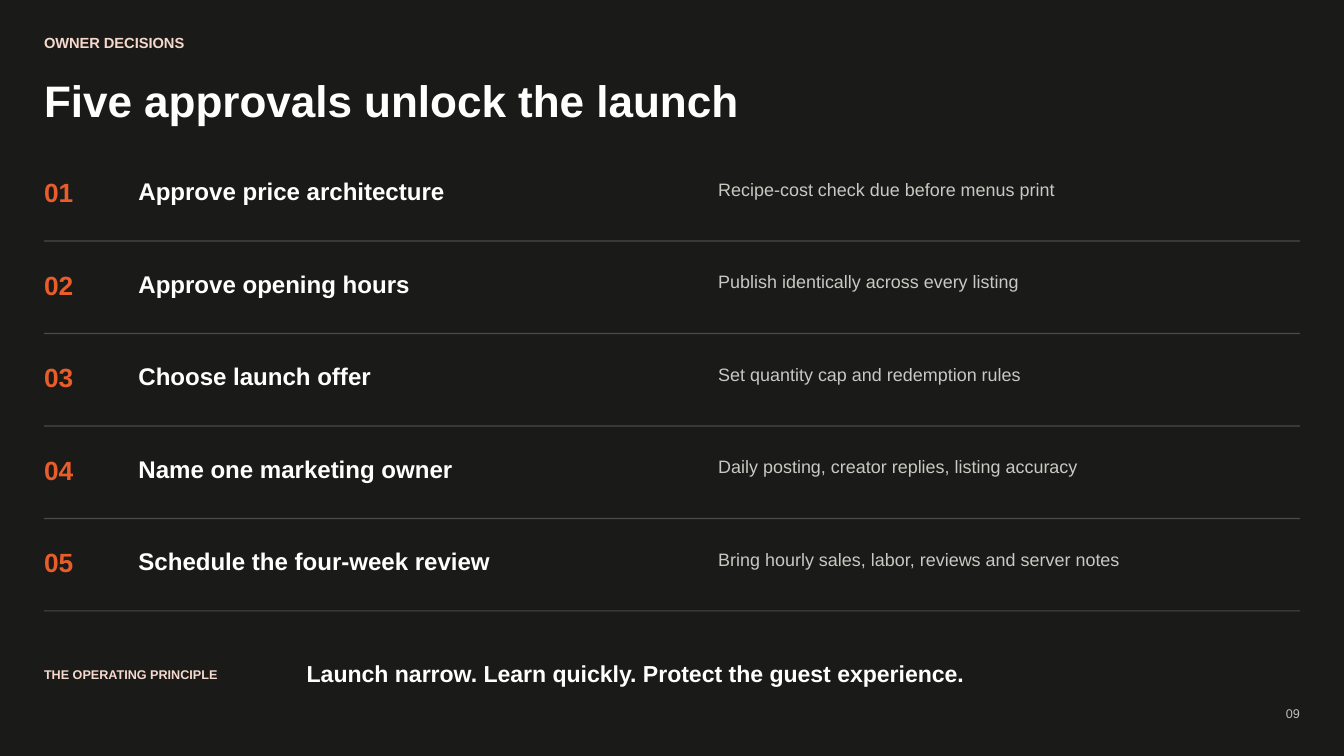
from pptx import Presentation
from pptx.dml.color import RGBColor
from pptx.enum.shapes import MSO_SHAPE
from pptx.enum.text import MSO_ANCHOR, PP_ALIGN
from pptx.util import Cm, Pt

RECTANGLE = MSO_SHAPE.RECTANGLE
TOP = MSO_ANCHOR.TOP
LEFT = PP_ALIGN.LEFT
RIGHT = PP_ALIGN.RIGHT

INK = RGBColor(0x1A, 0x1A, 0x18)
WHITE = RGBColor(0xFF, 0xFF, 0xFF)
BLUSH = RGBColor(0xF5, 0xD9, 0xCD)
ORANGE = RGBColor(0xE8, 0x5D, 0x2A)
SILVER = RGBColor(0xC9, 0xC9, 0xC3)
GREY = RGBColor(0xBF, 0xBF, 0xB9)
RULE = RGBColor(0x4B, 0x4B, 0x48)

MARGIN = 1.11
CONTENT_WIDTH = 31.65
FIRST_ROW = 4.45
ROW_PITCH = 2.33

APPROVALS = [
    ("Approve price architecture", "Recipe-cost check due before menus print"),
    ("Approve opening hours", "Publish identically across every listing"),
    ("Choose launch offer", "Set quantity cap and redemption rules"),
    ("Name one marketing owner", "Daily posting, creator replies, listing accuracy"),
    ("Schedule the four-week review", "Bring hourly sales, labor, reviews and server notes"),
]


class SlideBuilder:
    font_name = "Arial"

    def __init__(self, slide):
        self.slide = slide

    def background(self, color):
        fill = self.slide.background.fill
        fill.solid()
        fill.fore_color.rgb = color

    def text(self, content, left, top, width, height, size, color, bold=True, align=LEFT):
        shape = self.slide.shapes.add_textbox(Cm(left), Cm(top), Cm(width), Cm(height))
        frame = shape.text_frame
        frame.margin_left = frame.margin_right = 0
        frame.margin_top = frame.margin_bottom = 0
        frame.word_wrap = True
        frame.vertical_anchor = TOP
        paragraph = frame.paragraphs[0]
        paragraph.alignment = align
        run = paragraph.add_run()
        run.text = content
        run.font.name = self.font_name
        run.font.size = Pt(size)
        run.font.bold = bold
        run.font.color.rgb = color

    def rule(self, left, top, width):
        shape = self.slide.shapes.add_shape(RECTANGLE, Cm(left), Cm(top), Cm(width), Cm(0.03))
        shape.shadow.inherit = False
        shape.fill.solid()
        shape.fill.fore_color.rgb = RULE
        shape.line.fill.background()

    def approval(self, number, decision, detail, top):
        self.text(f"{number:02d}", MARGIN, top, 1.73, 1.07, 18.8, ORANGE)
        self.text(decision, 3.49, top, 13.76, 0.89, 17.2, WHITE)
        self.text(detail, 18.1, top + 0.05, 13.23, 1.17, 12.8, SILVER, bold=False)
        self.rule(MARGIN, top + 1.61, CONTENT_WIDTH)


def main():
    presentation = Presentation()
    presentation.slide_width = Cm(33.87)
    presentation.slide_height = Cm(19.05)
    builder = SlideBuilder(presentation.slides.add_slide(presentation.slide_layouts[6]))

    builder.background(INK)
    builder.text("OWNER DECISIONS", MARGIN, 0.85, 9.27, 0.58, 10.5, BLUSH)
    builder.text("Five approvals unlock the launch", MARGIN, 1.85, 29.64, 1.9, 31.5, WHITE)
    builder.text("09", 31.54, 17.78, 1.22, 0.48, 9, GREY, bold=False, align=RIGHT)

    for index, (decision, detail) in enumerate(APPROVALS):
        builder.approval(index + 1, decision, detail, FIRST_ROW + index * ROW_PITCH)

    builder.text("THE OPERATING PRINCIPLE", MARGIN, 16.8, 5.82, 0.53, 9, BLUSH)
    builder.text("Launch narrow. Learn quickly. Protect the guest experience.",
                 7.73, 16.62, 23.02, 0.89, 16.5, WHITE)

    presentation.save("out.pptx")


if __name__ == "__main__":
    main()
